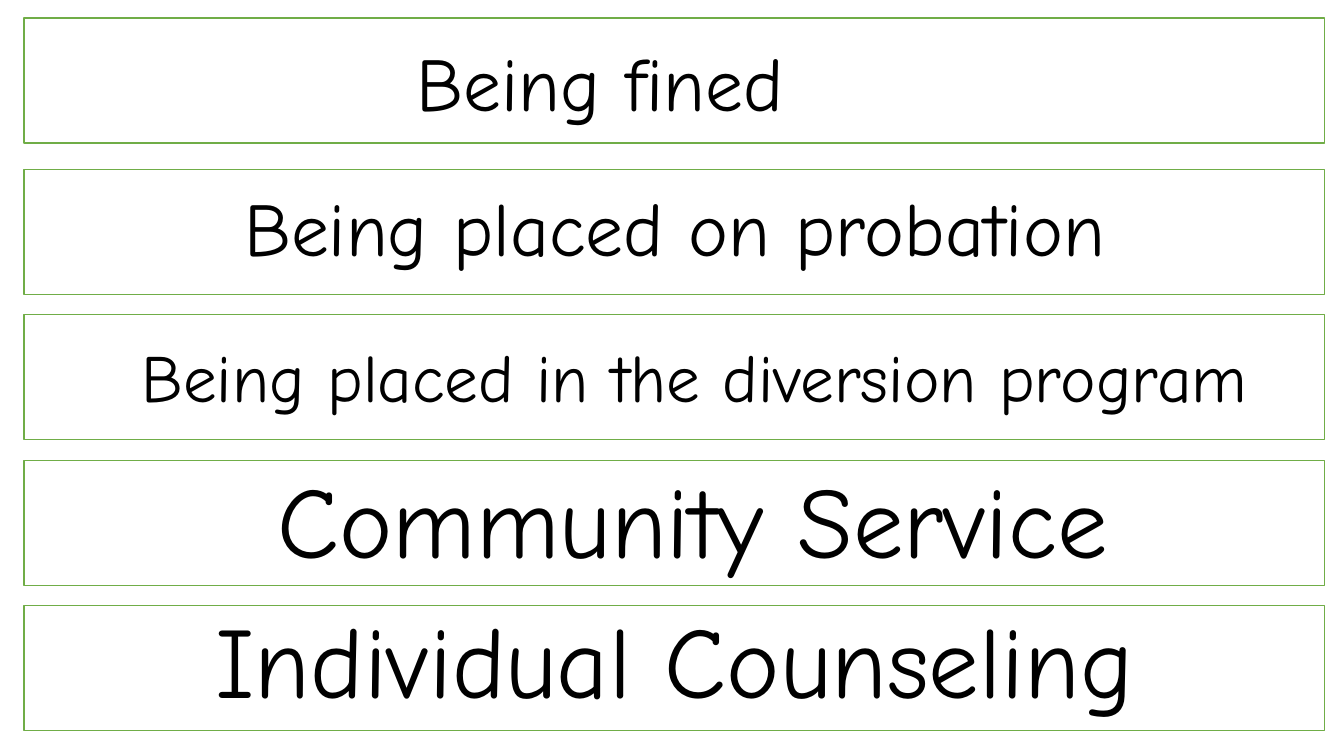
from dataclasses import dataclass

from pptx import Presentation
from pptx.dml.color import RGBColor
from pptx.enum.shapes import MSO_SHAPE
from pptx.enum.text import MSO_ANCHOR, MSO_AUTO_SIZE, PP_ALIGN
from pptx.shapes.shapetree import SlideShapes
from pptx.util import Inches, Pt

RECT = MSO_SHAPE.RECTANGLE
TOP = MSO_ANCHOR.TOP
GROW = MSO_AUTO_SIZE.SHAPE_TO_FIT_TEXT
CENTER = PP_ALIGN.CENTER

WHITE = RGBColor(0xFF, 0xFF, 0xFF)
GREEN = RGBColor(0x70, 0xAD, 0x47)
BLACK = RGBColor(0x00, 0x00, 0x00)
FONT = "Comic Neue"

LEFT = 0.24
WIDTH = 12.9
HEIGHT = 1.24


@dataclass(frozen=True)
class Strip:
    top: float
    text: str
    size: int
    text_left: float
    text_top: float
    text_height: float


STRIPS = (
    Strip(0.18, "Being fined", 54, -0.5, 0.31, 1.01),
    Strip(1.68, "Being placed on probation", 54, LEFT, 1.75, 1.01),
    Strip(3.12, "Being placed in the diversion program", 48, 0.44, 3.28, 0.91),
    Strip(4.57, "Community Service", 72, 0.42, 4.49, 1.31),
    Strip(6.01, "Individual Counseling", 72, LEFT, 5.88, 1.31),
)


def draw_frame(shapes: SlideShapes, strip: Strip) -> None:
    frame = shapes.add_shape(
        RECT, Inches(LEFT), Inches(strip.top), Inches(WIDTH), Inches(HEIGHT)
    )
    frame.shadow.inherit = False
    frame.fill.solid()
    frame.fill.fore_color.rgb = WHITE
    frame.line.color.rgb = GREEN
    frame.line.width = Pt(1)


def draw_label(shapes: SlideShapes, strip: Strip) -> None:
    label = shapes.add_textbox(
        Inches(strip.text_left),
        Inches(strip.text_top),
        Inches(WIDTH),
        Inches(strip.text_height),
    )
    body = label.text_frame
    body.word_wrap = True
    body.auto_size = GROW
    body.vertical_anchor = TOP
    line = body.paragraphs[0]
    line.text = strip.text
    line.alignment = CENTER
    line.font.name = FONT
    line.font.size = Pt(strip.size)
    line.font.color.rgb = BLACK


def main() -> None:
    deck = Presentation()
    deck.slide_width = Inches(13.33)
    deck.slide_height = Inches(7.5)
    shapes = deck.slides.add_slide(deck.slide_layouts[6]).shapes
    for strip in STRIPS:
        draw_frame(shapes, strip)
    for strip in STRIPS:
        draw_label(shapes, strip)
    deck.save("out.pptx")


if __name__ == "__main__":
    main()
